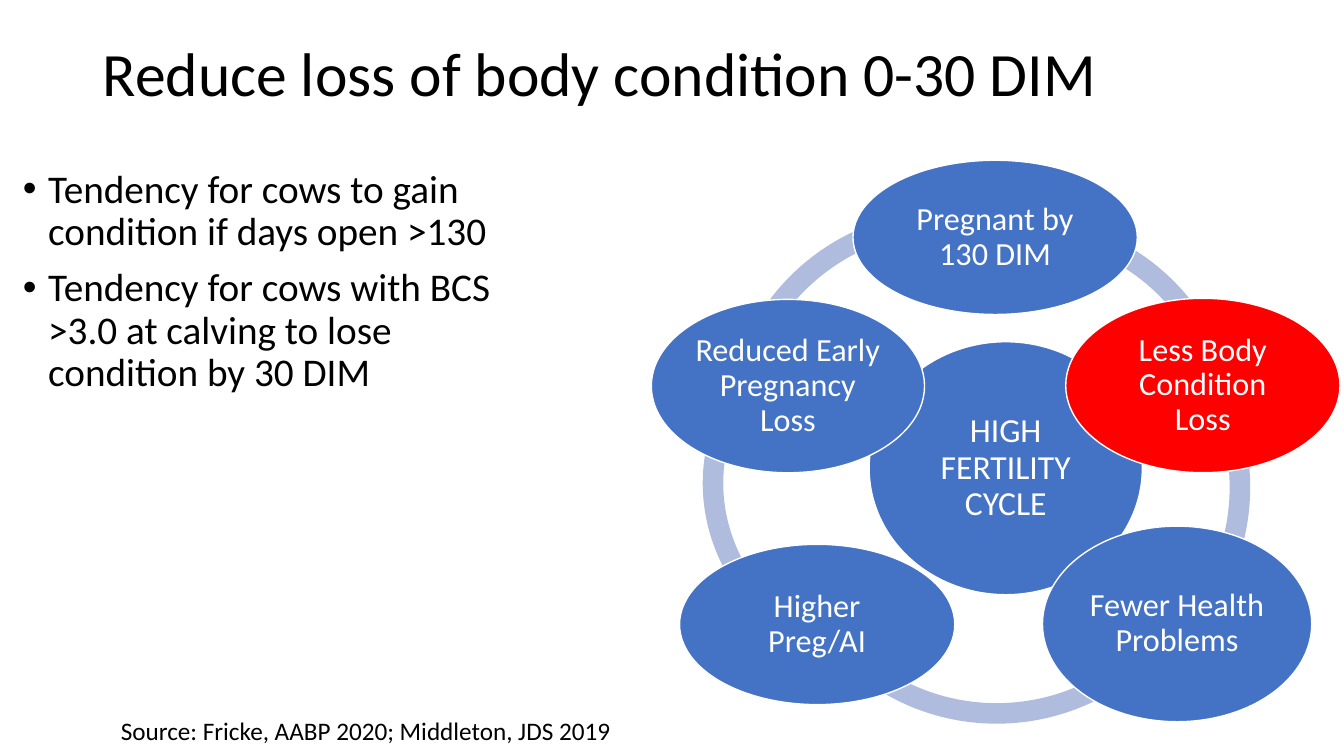
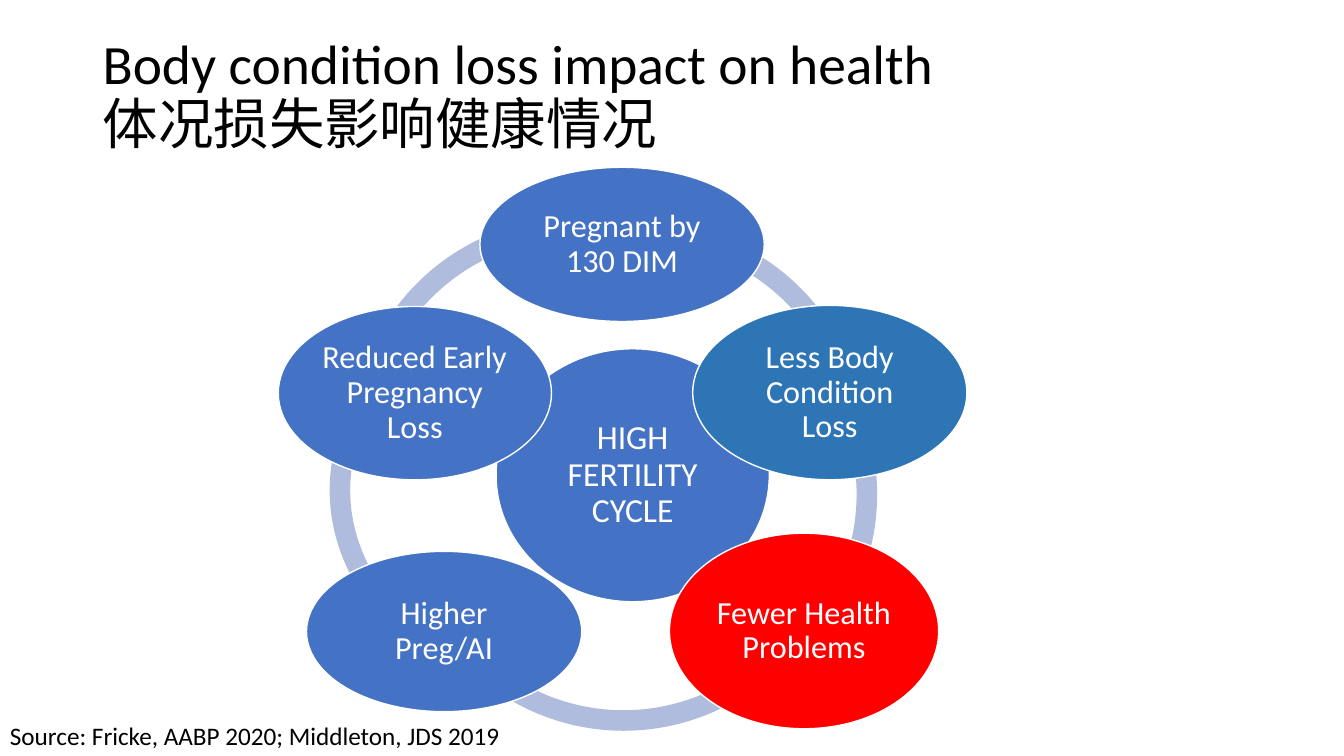
from lxml import etree
from pptx import Presentation
from pptx.dml.color import RGBColor
from pptx.enum.shapes import MSO_SHAPE as Shape
from pptx.enum.text import MSO_ANCHOR as Anchor, PP_ALIGN as Align
from pptx.oxml.ns import qn
from pptx.util import Inches, Pt

FONT = "Calibri"
BLACK, WHITE = "000000", "FFFFFF"
BLUE, DEEP_BLUE, RED, RING = "4472C4", "2E75B6", "FF0000", "B0BCDE"
SOURCE = "Source: Fricke, AABP 2020; Middleton, JDS 2019"
RING_THICKNESS = 0.046

# Left, top, width, height; start and end in degrees clockwise from the right
ARCS = [
    ((7.19, 2.09, 4.43, 4.43), 198.3, 270.1),
    ((6.97, 2.58, 5.57, 4.43), 139.6, 206.3),
    ((7.67, 2.75, 4.43, 4.43), 34.3, 145.4),
    ((7.97, 2.62, 4.43, 4.43), 332.9, 39.5),
    ((7.86, 2.14, 4.43, 4.43), 269.8, 341.4),
]
HUB = "HIGH FERTILITY CYCLE"
LESS_LOSS = "Less Body Condition Loss"
FEWER_PROBLEMS = "Fewer Health Problems"
STAGES = {
    HUB: (8.62, 3.39, 2.71, 2.51),
    "Pregnant by 130 DIM": (8.46, 1.59, 2.82, 1.53),
    LESS_LOSS: (10.57, 2.96, 2.72, 1.73),
    FEWER_PROBLEMS: (10.34, 5.22, 2.67, 1.94),
    "Higher Preg/AI": (6.74, 5.4, 2.73, 1.59),
    "Reduced Early Pregnancy Loss": (6.46, 2.97, 2.71, 1.72),
}


def rgb(value):
    return RGBColor.from_string(value)


def box(bounds):
    return [Inches(length) for length in bounds]


def apply(target, formats):
    for name, value in formats.items():
        setattr(target, name, value)


def write(frame, paragraphs, size, color, **formats):
    """Fill a text frame; formats apply to every paragraph."""
    frame.word_wrap = True
    for index, text in enumerate(paragraphs):
        paragraph = frame.add_paragraph() if index else frame.paragraphs[0]
        paragraph.text = text
        apply(paragraph, formats)
        apply(paragraph.font, {"name": FONT, "size": Pt(size)})
        paragraph.font.color.rgb = rgb(color)


def add_text(slide, bounds, paragraphs, size, **formats):
    frame = slide.shapes.add_textbox(*box(bounds)).text_frame
    write(frame, paragraphs, size, BLACK, **formats)
    return frame


def add_title(slide, top, text, size):
    frame = add_text(slide, (0.92, top, 11.5, 1.12), [text], size,
                     line_spacing=0.9)
    frame.vertical_anchor = Anchor.MIDDLE


def add_bullets(slide, bounds, items):
    frame = add_text(slide, bounds, items, 28,
                     line_spacing=0.9, space_before=Pt(10))
    for paragraph in frame.paragraphs:
        properties = paragraph._p.get_or_add_pPr()
        properties.set("marL", str(Inches(0.25)))
        properties.set("indent", str(-Inches(0.25)))
        font = etree.Element(qn("a:buFont"), typeface="Arial")
        bullet = etree.Element(qn("a:buChar"), char="•")
        # Bullet elements precede the default run properties
        defaults = properties.find(qn("a:defRPr"))
        defaults.addprevious(font)
        defaults.addprevious(bullet)


def add_source(slide, left, top):
    add_text(slide, (left, top, 5.13, 0.4), [SOURCE], 18)


def add_preset(group, preset, bounds, fill):
    shape = group.shapes.add_shape(preset, *box(bounds))
    shape.shadow.inherit = False
    shape.fill.solid()
    shape.fill.fore_color.rgb = rgb(fill)
    return shape


def add_arc(group, bounds, start, end):
    arc = add_preset(group, Shape.BLOCK_ARC, bounds, RING)
    arc.line.fill.background()
    # Angles are stored in 1/60000 degree, adjustments in 1/100000
    for index, value in enumerate((start * 0.6, end * 0.6, RING_THICKNESS)):
        arc.adjustments[index] = value


def add_stage(group, bounds, text, fill):
    stage = add_preset(group, Shape.OVAL, bounds, fill)
    stage.line.color.rgb = rgb(WHITE)
    stage.line.width = Pt(1)
    frame = stage.text_frame
    margins = ("margin_left", "margin_top", "margin_right", "margin_bottom")
    apply(frame, dict.fromkeys(margins, Inches(0.03)))
    frame.vertical_anchor = Anchor.MIDDLE
    write(frame, [text], 24 if text == HUB else 23, WHITE,
          alignment=Align.CENTER, line_spacing=0.9)


def add_cycle(slide, accents, shift=(0, 0)):
    """Draw the fertility cycle, with accents giving some stages a colour."""
    group = slide.shapes.add_group_shape()
    for bounds, start, end in ARCS:
        add_arc(group, bounds, start, end)
    for text, bounds in STAGES.items():
        add_stage(group, bounds, text, accents.get(text, BLUE))
    across, down = box(shift)
    group.left += across
    group.top += down


def main():
    deck = Presentation()
    deck.slide_width, deck.slide_height = box((13.33, 7.5))
    blank = deck.slide_layouts[6]

    condition = deck.slides.add_slide(blank)
    add_title(condition, 0.2, "Reduce loss of body condition 0-30 DIM", 44)
    add_bullets(condition, (0.13, 1.63, 5.27, 5.66), [
        "Tendency for cows to gain condition if days open >130",
        "Tendency for cows with BCS >3.0 at calving to lose condition by 30 DIM",
    ])
    add_cycle(condition, {LESS_LOSS: RED})
    add_source(condition, 1.1, 7.05)

    health = deck.slides.add_slide(blank)
    add_title(health, 0.4,
              "Body condition loss impact on health\v体况损失影响健康情况", 39.6)
    add_cycle(health, {LESS_LOSS: DEEP_BLUE, FEWER_PROBLEMS: RED},
              shift=(-3.7, 0.07))
    add_source(health, 0, 7.1)

    deck.save("out.pptx")


if __name__ == "__main__":
    main()
